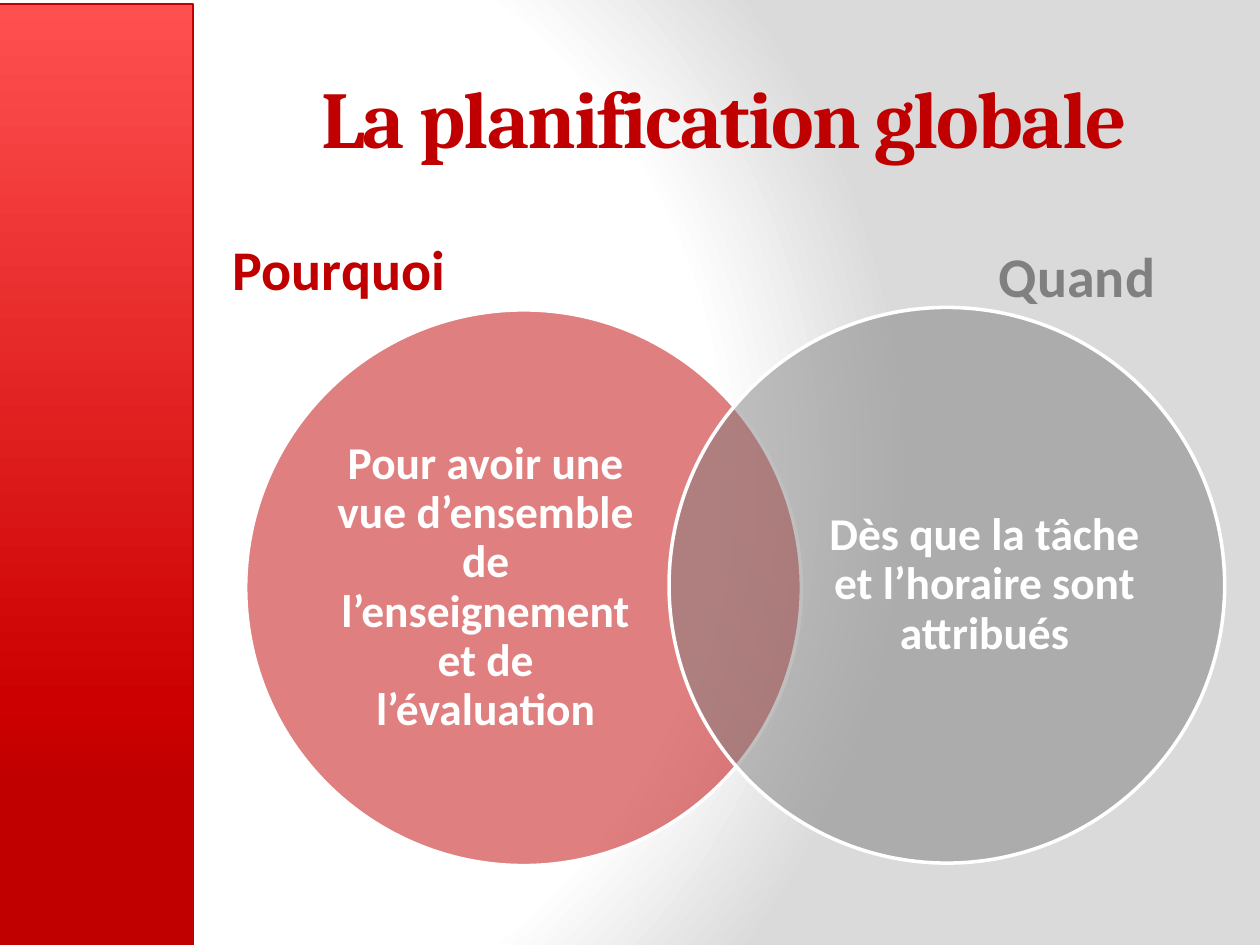
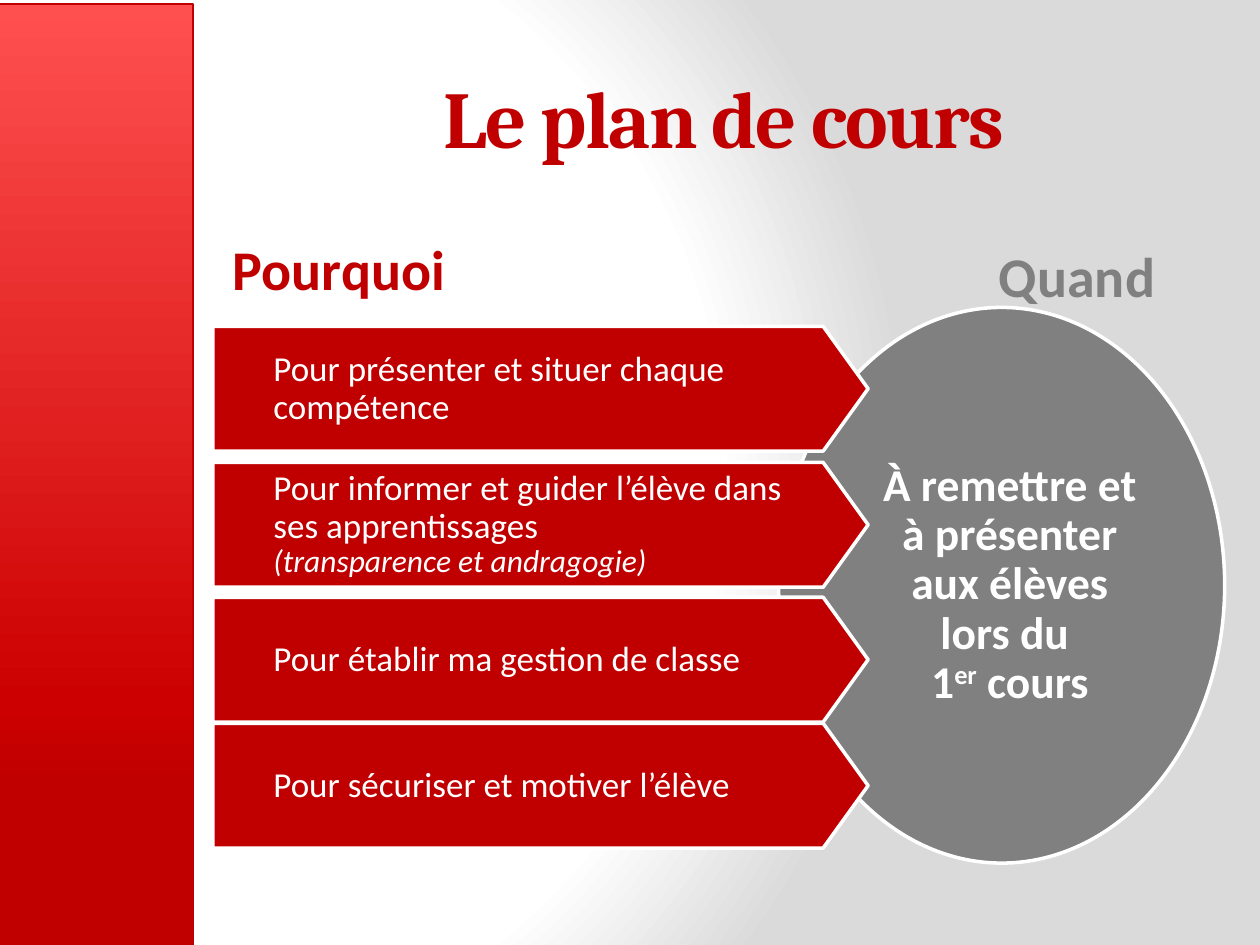
from lxml import etree
from pptx import Presentation
from pptx.dml.color import RGBColor
from pptx.enum.shapes import MSO_SHAPE
from pptx.enum.text import MSO_ANCHOR, MSO_AUTO_SIZE, PP_ALIGN
from pptx.oxml import parse_xml
from pptx.oxml.ns import nsdecls, qn
from pptx.util import Inches, Pt

RED, GREY, WHITE = "C00000", "808080", "FFFFFF"
BAND_STOPS = [(0, "FF5050"), (74, "CC0000"), (83, RED), (100, RED)]
BACK_STOPS = [(0, WHITE), (75, WHITE), (100, "DADADA")]
LINEAR = '<a:lin ang="5400000" scaled="0"/>'
CIRCULAR = ('<a:path path="circle"><a:fillToRect l="20000" t="50000" '
            'r="100000" b="50000"/></a:path>')


def rgb(color):
    return RGBColor.from_string(color)


def set_gradient(fill, owner, stops, direction):
    """Give a fill its own gradient stops and direction."""
    fill.gradient()
    grad = owner.xpath(".//a:gradFill")[0]
    gs = "".join(f'<a:gs pos="{pos * 1000}"><a:srgbClr val="{color}"/></a:gs>'
                 for pos, color in stops)
    grad.getparent().replace(grad, parse_xml(
        f'<a:gradFill {nsdecls("a")} rotWithShape="1"><a:gsLst>{gs}</a:gsLst>'
        f'{direction}</a:gradFill>'))


class Deck:
    heading_font, body_font = "Cambria", "Calibri"

    def __init__(self):
        self.prs = Presentation()
        self.prs.slide_width, self.prs.slide_height = Inches(10), Inches(7.5)
        master = self.prs.slide_master
        set_gradient(master.background.fill, master.element.cSld, BACK_STOPS, CIRCULAR)

    def slide(self, title):
        self.s = self.prs.slides.add_slide(self.prs.slide_layouts[5])
        # Red side band
        band = self.shape(MSO_SHAPE.RECTANGLE, (-0.16, 0.03, 1.69, 7.5), RED, RED, 1)
        set_gradient(band.fill, band.element.spPr, BAND_STOPS, LINEAR)
        # Title
        sp = self.s.shapes.title
        sp.left, sp.top, sp.width, sp.height = map(Inches, (1.77, 0.3, 7.95, 1.25))
        tf = sp.text_frame
        tf.vertical_anchor = MSO_ANCHOR.MIDDLE
        p = tf.paragraphs[0]
        p.alignment = PP_ALIGN.CENTER
        self.run(p, title, 46, RED, bold=True, font=self.heading_font, spc="-100")

    def run(self, p, text, size, color, bold=False, italic=False, font=None, **extra):
        """Add text with line breaks; extra holds further run attributes."""
        for i, line in enumerate(text.split("\n")):
            if i:
                p.add_line_break()
            if line:
                r = p.add_run()
                r.text = line
                f = r.font
                f.name, f.size = font or self.body_font, Pt(size)
                f.bold, f.italic = bold, italic
                f.color.rgb = rgb(color)
                for name, value in extra.items():
                    r._r.get_or_add_rPr().set(name, value)

    def shape(self, kind, box, fill, line=WHITE, width=2, alpha=None):
        sp = self.s.shapes.add_shape(kind, *map(Inches, box))
        sp.shadow.inherit = False
        sp.fill.solid()
        sp.fill.fore_color.rgb = rgb(fill)
        if alpha:
            clr = sp.element.spPr.find(qn("a:solidFill"))[0]
            etree.SubElement(clr, qn("a:alpha")).set("val", str(alpha * 1000))
        sp.line.color.rgb = rgb(line)
        sp.line.width = Pt(width)
        return sp

    def fill_text(self, sp, runs, size, align, insets, bold=False):
        tf = sp.text_frame
        tf.word_wrap = True
        tf.vertical_anchor = MSO_ANCHOR.MIDDLE
        (tf.margin_left, tf.margin_top,
         tf.margin_right, tf.margin_bottom) = map(Inches, insets)
        p = tf.paragraphs[0]
        p.alignment = align
        p.line_spacing = 0.9
        for text, style in runs:
            self.run(p, text, **{"size": size, "color": WHITE, "bold": bold, **style})

    def oval(self, box, color, runs, left, right, alpha=None):
        sp = self.shape(MSO_SHAPE.OVAL, box, color, alpha=alpha)
        self.fill_text(sp, runs, 26, PP_ALIGN.CENTER, (left, 0, right, 0), bold=True)

    def arrow(self, top, runs):
        sp = self.shape(MSO_SHAPE.PENTAGON, (1.69, top, 5.2, 0.99), RED)
        sp.adjustments[0] = 0.36
        self.fill_text(sp, runs, 20, PP_ALIGN.LEFT, (0.48, 0.08, 0, 0.08))

    def label(self, text, box, color):
        tf = self.s.shapes.add_textbox(*map(Inches, box)).text_frame
        tf.word_wrap = True
        tf.auto_size = MSO_AUTO_SIZE.SHAPE_TO_FIT_TEXT
        self.run(tf.paragraphs[0], text, 32, color, bold=True)

    def labels(self):
        self.label("Pourquoi", (1.75, 1.81, 2.36, 0.64), RED)
        self.label("Quand", (7.83, 1.87, 1.5, 0.64), GREY)


def main():
    deck = Deck()

    # Slide 1: two overlapping circles
    deck.slide("La planification globale")
    deck.oval((1.95, 2.46, 4.41, 4.41), RED,
              [("Pour avoir une vue d’ensemble de l’enseignement et de l’évaluation", {})],
              left=0, right=0.6, alpha=50)
    deck.oval((5.31, 2.44, 4.41, 4.41), GREY,
              [("Dès que la tâche et l’horaire sont attribués", {})],
              left=0.6, right=0, alpha=50)
    deck.labels()

    # Slide 2: four arrows pointing into an oval
    deck.slide("Le plan de cours")
    deck.labels()
    deck.oval((6.18, 2.44, 3.54, 4.41), GREY,
              [("À remettre et à présenter aux élèves lors du \n1", {}),
               ("er", {"baseline": "30000"}), (" cours", {})],
              left=0.23, right=0.1)
    reasons = [
        (2.59, [("Pour présenter et situer chaque \ncompétence", {})]),
        (3.67, [("Pour informer et guider l’élève dans \nses apprentissages \n", {}),
                ("(transparence et andragogie)", {"size": 18, "italic": True})]),
        (4.74, [("Pour établir ma gestion de classe", {})]),
        (5.74, [("Pour sécuriser et motiver l’élève", {})]),
    ]
    for top, runs in reasons:
        deck.arrow(top, runs)

    deck.prs.save("out.pptx")


if __name__ == "__main__":
    main()
